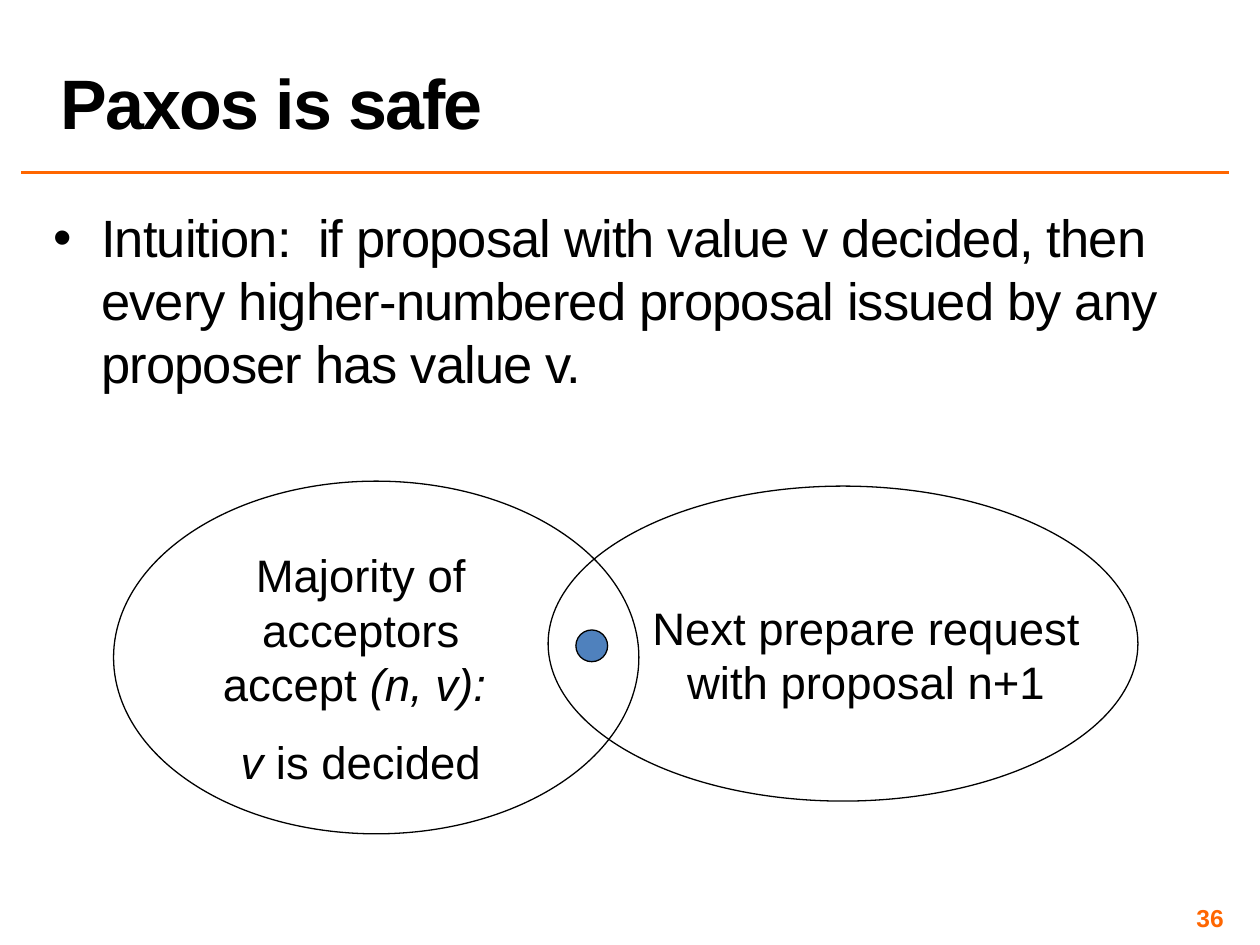
from lxml import etree
from pptx import Presentation
from pptx.dml.color import RGBColor
from pptx.enum.shapes import MSO_CONNECTOR, MSO_SHAPE
from pptx.enum.text import MSO_ANCHOR, MSO_AUTO_SIZE, PP_ALIGN
from pptx.oxml.ns import qn
from pptx.util import Cm, Pt

LEFT, MID, RIGHT = PP_ALIGN.LEFT, PP_ALIGN.CENTER, PP_ALIGN.RIGHT
TOP, CENTER, BOTTOM = MSO_ANCHOR.TOP, MSO_ANCHOR.MIDDLE, MSO_ANCHOR.BOTTOM
OVAL, LINE, FIXED = MSO_SHAPE.OVAL, MSO_CONNECTOR.STRAIGHT, MSO_AUTO_SIZE.NONE

BLACK, ORANGE = "000000", "FF6600"
TITLE = [[("Paxos is safe", False)]]
BODY = [[("Intuition:  if proposal with value v decided, then every "
          "higher-numbered proposal issued by any proposer has value v.", False)]]
PAGE = [[("36", False)]]
OVALS = [
    ((2.29, 9.7, 10.59, 7.11), "FFFFFF",
     (3.68, 10.9, 7.19, 5.26),
     [[("Majority of acceptors accept ", False), ("(n, v): ", True)],
      [("v", True), (" is decided", False)]]),
    ((11.05, 9.8, 11.89, 6.35), None,
     (12.6, 11.96, 9.73, 2.49),
     [[("Next prepare request with proposal n+1", False)]]),
]
DOT = (11.61, 12.7, 0.64, 0.64)


def tint(code):
    return RGBColor.from_string(code)


def place(shape, box):
    shape.left, shape.top, shape.width, shape.height = map(Cm, box)


def write(shape, paras, size, align, anchor=TOP, pad=(0.25, 0.13),
          color=BLACK, bold=False, gap=0, track=0):
    frame = shape.text_frame
    frame.word_wrap = True
    frame.auto_size = FIXED
    frame.vertical_anchor = anchor
    frame.margin_left = frame.margin_right = Cm(pad[0])
    frame.margin_top = frame.margin_bottom = Cm(pad[1])
    for i, runs in enumerate(paras):
        para = frame.add_paragraph() if i else frame.paragraphs[0]
        para.alignment = align
        para.space_before = Pt(gap)
        for text, slant in runs:
            run = para.add_run()
            run.text = text
            font = run.font
            font.name, font.size = "Arial", Pt(size)
            font.bold, font.italic = bold, slant
            font.color.rgb = tint(color)
            if track:
                run._r.get_or_add_rPr().set("spc", str(track))
    return frame.paragraphs[0]


def label(slide, box, paras, *args, **opts):
    shape = slide.shapes.add_textbox(*map(Cm, box))
    write(shape, paras, *args, **opts)


def oval(slide, box, fill):
    shape = slide.shapes.add_shape(OVAL, *map(Cm, box))
    shape.shadow.inherit = False
    if fill:
        shape.fill.solid()
        shape.fill.fore_color.rgb = tint(fill)
    else:
        shape.fill.background()
    shape.line.color.rgb = tint(BLACK)
    shape.line.width = Pt(0.75)


def rule(slide, left, right, y):
    line = slide.shapes.add_connector(LINE, Cm(left), Cm(y), Cm(right), Cm(y))
    line.line.color.rgb = tint(ORANGE)
    line.line.width = Pt(2)
    etree.SubElement(line._element.spPr, qn("a:effectLst"))


def bullet(para, indent):
    props = para._p.get_or_add_pPr()
    props.set("marL", str(Cm(indent)))
    props.set("indent", str(-Cm(indent)))
    etree.SubElement(props, qn("a:buFont")).set("typeface", "Arial")
    etree.SubElement(props, qn("a:buChar")).set("char", "•")


def main():
    deck = Presentation()
    deck.slide_width, deck.slide_height = Cm(25.4), Cm(19.05)
    slide = deck.slides.add_slide(deck.slide_layouts[1])
    title, body = slide.placeholders
    rule(slide, 0.43, 24.77, 3.48)

    place(title, (0.97, 0.05, 23.8, 2.97))
    head = write(title, TITLE, 40, LEFT, BOTTOM, bold=True, track=-100)
    head.line_spacing = 0.8

    place(body, (0.97, 4.04, 23.8, 13.92))
    item = write(body, BODY, 30, LEFT, pad=(0.1, 0.1), gap=30, track=-50)
    item.space_after = Pt(8)
    bullet(item, 0.97)

    label(slide, (18.85, 18.21, 5.92, 0.58), PAGE, 14, RIGHT, CENTER,
          pad=(0.1, 0.1), color=ORANGE, bold=True)
    for box, fill, area, paras in OVALS:
        oval(slide, box, fill)
        label(slide, area, paras, 26, MID, gap=13)
    oval(slide, DOT, "4F81BD")
    deck.save("out.pptx")


if __name__ == "__main__":
    main()
